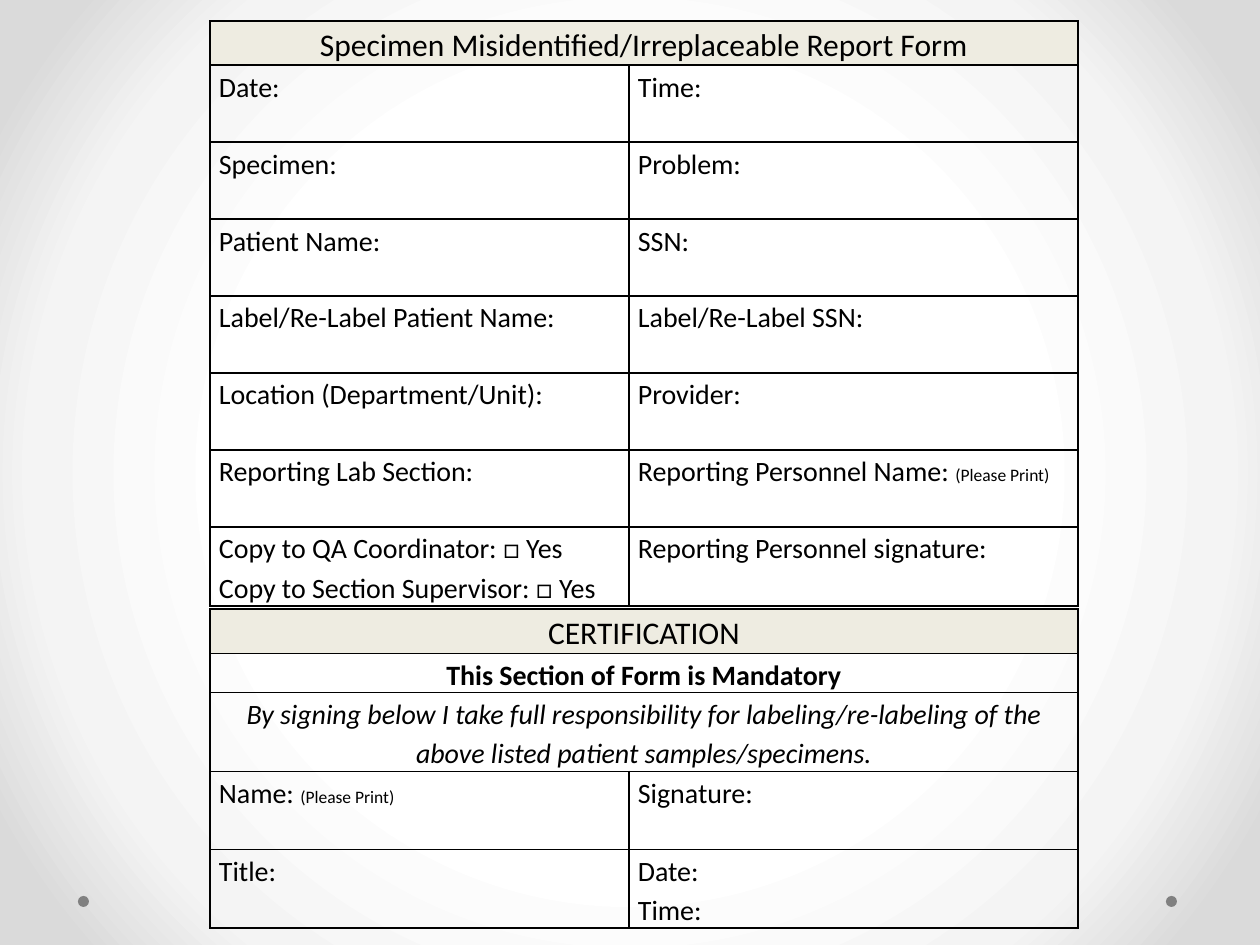
from lxml import etree
from pptx import Presentation
from pptx.dml.color import RGBColor
from pptx.enum import shapes, text
from pptx.oxml import parse_xml
from pptx.oxml.ns import nsdecls, qn
from pptx.util import Pt

BLACK, BEIGE, GREY = "000000", "EEECE1", "808080"
FONT = "Calibri"
BACKDROP = [(50, "FFFFFF"), (76, "F4F4F4"), (92, "DADADA")]

# Each cell is a list of paragraphs, each paragraph a list of (words, style).
# A row with one cell spans the full width.
TITLE, PLAIN, SMALL = {"size": 18}, {"size": 16}, {"size": 10}
BOLD, ITALIC = {"size": 16, "bold": True}, {"size": 16, "italic": True}
PRINT = ("(Please Print)", SMALL)


def plain(*lines):
    return [[(line, PLAIN)] for line in lines]


REPORT = [
    (44, [[[("Specimen Misidentified/Irreplaceable Report Form", TITLE)]]]),
    (77, [plain("Date:"), plain("Time:")]),
    (77, [plain("Specimen:"), plain("Problem:")]),
    (77, [plain("Patient Name:"), plain("SSN:")]),
    (77, [plain("Label/Re-Label Patient Name:"), plain("Label/Re-Label SSN:")]),
    (77, [plain("Location (Department/Unit):"), plain("Provider:")]),
    (77, [plain("Reporting Lab Section:"),
          [[("Reporting Personnel Name: ", PLAIN), PRINT]]]),
    (77, [plain("Copy to QA Coordinator: □ Yes", "Copy to Section Supervisor: □ Yes"),
          plain("Reporting Personnel signature:")]),
]
CERTIFICATION = [
    (44, [[[("CERTIFICATION", TITLE)]]]),
    (38, [[[("This Section of Form is Mandatory", BOLD)]]]),
    (78, [[[("By signing below I take full responsibility for labeling/re-labeling "
             "of the above listed patient samples/specimens.", ITALIC)]]]),
    (78, [[[("Name: ", PLAIN), PRINT]], plain("Signature:")]),
    (78, [plain("Title:"), plain("Date:", "Time:")]),
]
TABLE_LEFT, COLUMNS = 210, (419, 449)
TABLES = [(21, REPORT), (609, CERTIFICATION)]
DOT_SIZE, DOT_TOP, DOT_LEFTS = 11, 896, (1166, 78)


def px(length):
    return round(length * 914400 / 126)


def colour(value):
    return RGBColor.from_string(value)


def set_backdrop(page):
    stops = "".join(f'<a:gs pos="{at * 1000}"><a:srgbClr val="{value}"/></a:gs>'
                    for at, value in BACKDROP)
    page.background.fill.solid()
    solid = page.background._cSld.find(".//" + qn("a:solidFill"))
    solid.getparent().replace(solid, parse_xml(
        f'<a:gradFill {nsdecls("a")} rotWithShape="1"><a:gsLst>{stops}</a:gsLst>'
        '<a:path path="circle"><a:fillToRect l="50000" t="50000" r="50000" b="50000"/>'
        '</a:path></a:gradFill>'))


def add_borders(cell):
    properties = cell._tc.get_or_add_tcPr()
    for index, side in enumerate(("lnL", "lnR", "lnT", "lnB")):
        line = etree.Element(qn(f"a:{side}"), w=str(Pt(1)))
        fill = etree.SubElement(line, qn("a:solidFill"))
        etree.SubElement(fill, qn("a:srgbClr"), val=BLACK)
        properties.insert(index, line)


def write_cell(cell, paragraphs, centred):
    for index, spans in enumerate(paragraphs):
        frame = cell.text_frame
        para = frame.add_paragraph() if index else frame.paragraphs[0]
        para.line_spacing = 1.15
        para.alignment = text.PP_ALIGN.CENTER if centred else text.PP_ALIGN.LEFT
        for words, style in spans:
            span = para.add_run()
            span.text = words
            span.font.name = FONT
            span.font.size = Pt(style["size"])
            span.font.bold = style.get("bold", False)
            span.font.italic = style.get("italic", False)
            span.font.color.rgb = colour(BLACK)


def add_form(page, top, rows):
    height = sum(row_height for row_height, _ in rows)
    table = page.shapes.add_table(len(rows), len(COLUMNS), px(TABLE_LEFT), px(top),
                                  px(sum(COLUMNS)), px(height)).table
    table.first_row = table.horz_banding = False
    for column, width in zip(table.columns, COLUMNS):
        column.width = px(width)
    for number, (row_height, contents) in enumerate(rows):
        row = table.rows[number]
        row.height = px(row_height)
        for cell in row.cells:
            cell.margin_left = cell.margin_right = px(9)
            cell.margin_top = cell.margin_bottom = 0
            if number == 0:
                cell.fill.solid()
                cell.fill.fore_color.rgb = colour(BEIGE)
            else:
                cell.fill.background()
            add_borders(cell)
        full_width = len(contents) == 1
        if full_width:
            row.cells[0].merge(row.cells[1])
        for cell, paragraphs in zip(row.cells, contents):
            write_cell(cell, paragraphs, full_width)


def main():
    deck = Presentation()
    deck.slide_width, deck.slide_height = px(1260), px(945)
    page = deck.slides.add_slide(deck.slide_layouts[6])
    set_backdrop(page)

    # Corner dots
    for left in DOT_LEFTS:
        dot = page.shapes.add_shape(shapes.MSO_SHAPE.OVAL, px(left), px(DOT_TOP),
                                    px(DOT_SIZE), px(DOT_SIZE))
        dot.shadow.inherit = False
        dot.fill.solid()
        dot.fill.fore_color.rgb = colour(GREY)
        dot.line.fill.background()

    # Form tables
    for top, rows in TABLES:
        add_form(page, top, rows)
    deck.save("out.pptx")


if __name__ == "__main__":
    main()
